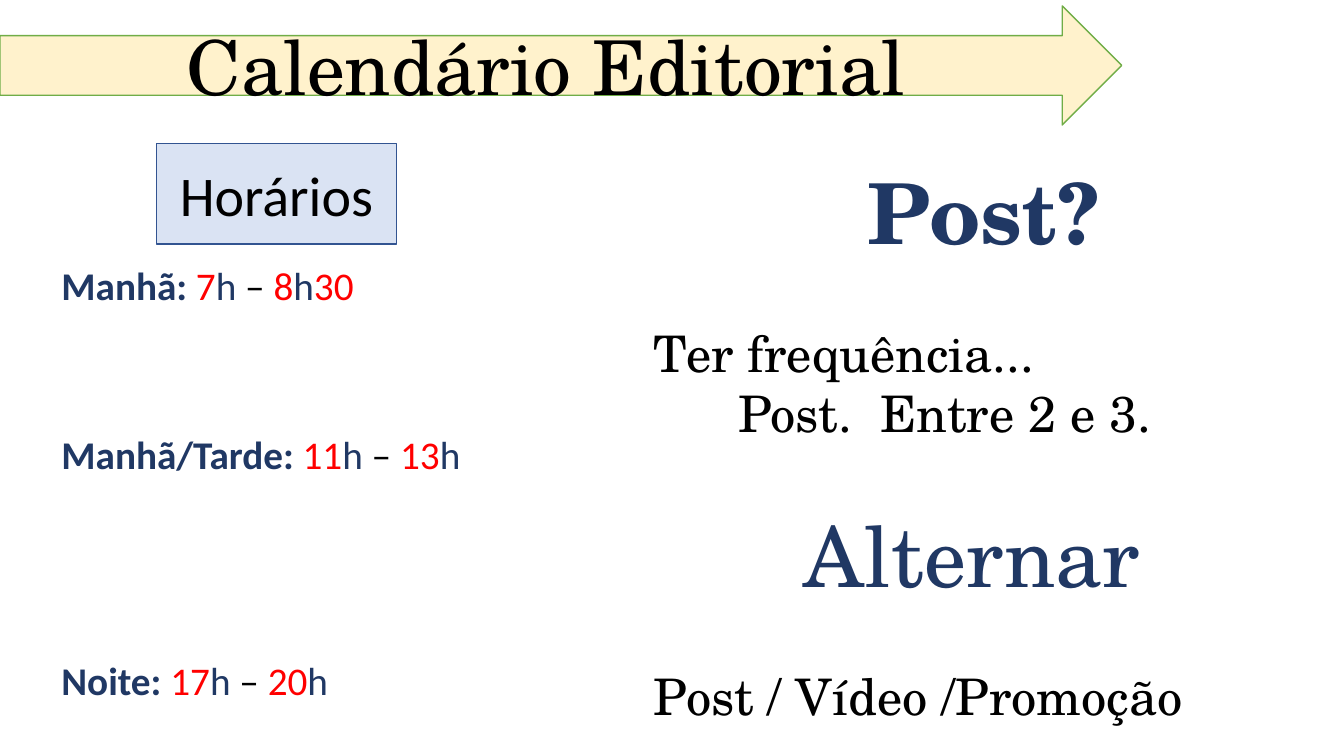
import pptx
import pptx.util
import pptx.dml.color
import pptx.enum.shapes
import pptx.enum.text

Cm, Pt = pptx.util.Cm, pptx.util.Pt
SHAPE = pptx.enum.shapes.MSO_SHAPE
ALIGN = pptx.enum.text.PP_ALIGN
SERIF, SANS = "TeX Gyre Schola", "Calibri"
NAVY, RED, BLACK = "203864", "FF0000", "000000"


def rgb(value):
    return pptx.dml.color.RGBColor.from_string(value)


def add_run(p, text, size, font, color, bold=False):
    r = p.add_run()
    r.text = text
    r.font.size = Pt(size)
    r.font.name = font
    r.font.bold = bold
    r.font.color.rgb = rgb(color)


prs = pptx.Presentation()
prs.slide_width, prs.slide_height = Cm(33.87), Cm(19.05)
s = prs.slides.add_slide(prs.slide_layouts[6])

schedule = [
    ("Manhã: ", [("7", RED), ("h", NAVY), (" – ", BLACK), ("8", RED), ("h", NAVY), ("30", RED)], 0),
    ("Manhã/Tarde: ", [("11", RED), ("h", NAVY), (" – ", BLACK), ("13", RED), ("h", NAVY)], 90.5),
    ("Noite: ", [("17", RED), ("h", NAVY), (" – ", BLACK), ("20", RED), ("h", NAVY)], 131),
]
tf = s.shapes.add_textbox(Cm(1.3), Cm(6.6), Cm(11.07), Cm(11.86)).text_frame
tf.word_wrap = True
for i, (period, hours, gap) in enumerate(schedule):
    p = tf.add_paragraph() if i else tf.paragraphs[0]
    p.line_spacing = 0.9
    p.space_before = Pt(gap)
    add_run(p, period, 28, SANS, NAVY, True)
    for text, color in hours:
        add_run(p, text, 28, SANS, color)

advice = [
    ("Post?", 60, NAVY, True, ALIGN.CENTER, 0, 0),
    ("Ter frequência...", 36, BLACK, False, ALIGN.LEFT, 43.5, 0),
    ("Post.  Entre 2 e 3.", 36, BLACK, False, ALIGN.LEFT, 0, 2.12),
    ("Alternar ", 60, NAVY, False, ALIGN.CENTER, 43.5, 0),
    ("Post / Vídeo /Promoção", 36, BLACK, False, ALIGN.LEFT, 43.5, 0),
]
tf = s.shapes.add_textbox(Cm(16.23), Cm(3.91), Cm(17.12), Cm(14.63)).text_frame
tf.word_wrap = True
for i, (text, size, color, bold, align, gap, indent) in enumerate(advice):
    p = tf.add_paragraph() if i else tf.paragraphs[0]
    p.alignment = align
    p.space_before = Pt(gap)
    if indent:
        p._p.get_or_add_pPr().set("marL", str(Cm(indent)))
    add_run(p, text, size, SERIF, color, bold)

banners = [
    (SHAPE.RECTANGLE, 3.94, 3.61, 6.05, 2.54, "DAE3F3", "325491", "Horários", 40, SANS),
    (SHAPE.RIGHT_ARROW, 0, 0.15, 28.27, 3, "FFF2CC", "70AD47", "Calendário Editorial", 54, SERIF),
]
for kind, left, top, width, height, fill, line, text, size, font in banners:
    sp = s.shapes.add_shape(kind, Cm(left), Cm(top), Cm(width), Cm(height))
    sp.shadow.inherit = False
    sp.fill.solid()
    sp.fill.fore_color.rgb = rgb(fill)
    sp.line.color.rgb = rgb(line)
    sp.line.width = Pt(1)
    tf = sp.text_frame
    tf.word_wrap = True
    tf.vertical_anchor = pptx.enum.text.MSO_ANCHOR.MIDDLE
    p = tf.paragraphs[0]
    p.alignment = ALIGN.CENTER
    add_run(p, text, size, font, BLACK)

prs.save("out.pptx")
